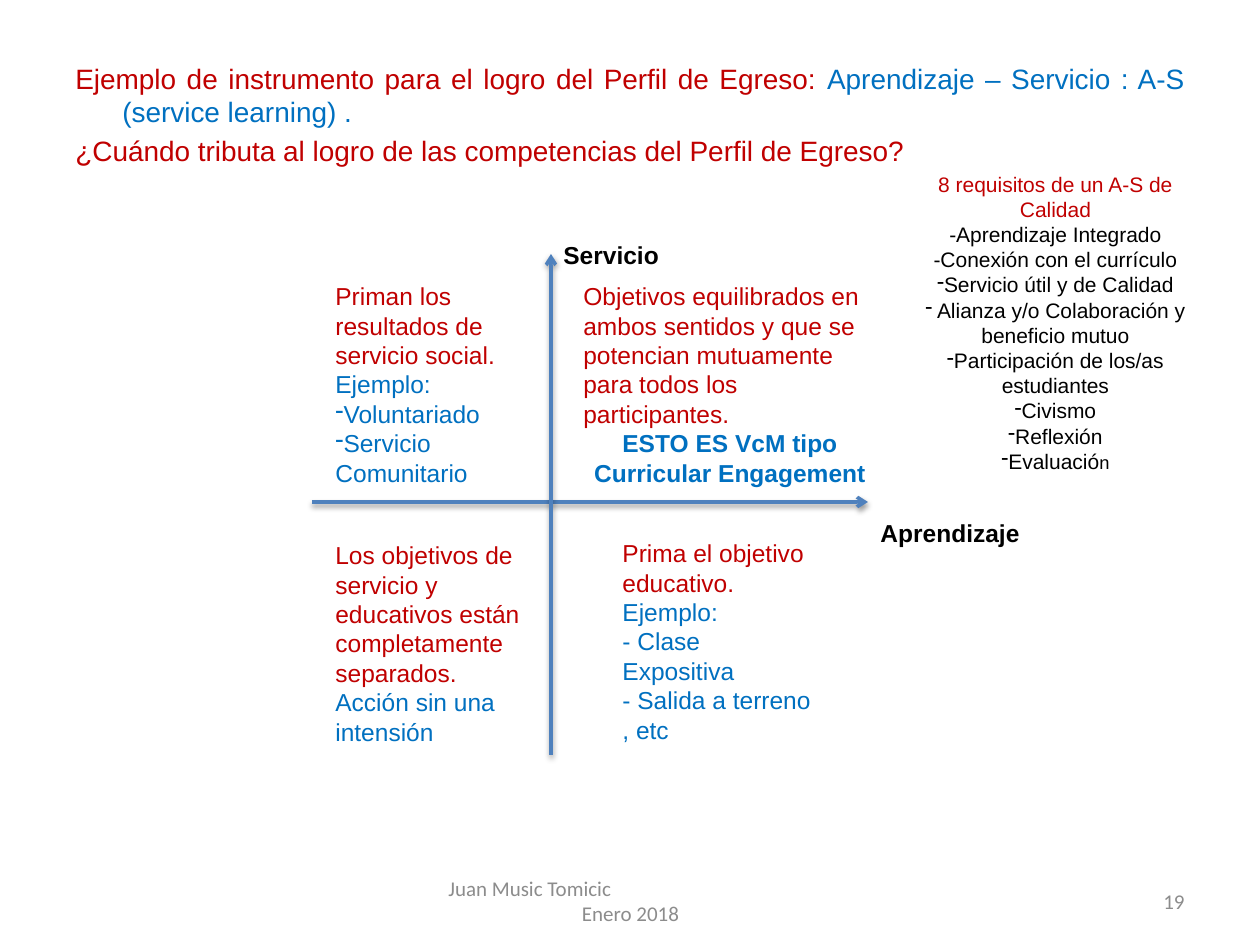
from lxml.etree import SubElement
from pptx import Presentation
from pptx.dml.color import RGBColor
from pptx.enum.shapes import MSO_CONNECTOR
from pptx.enum.text import MSO_ANCHOR, PP_ALIGN
from pptx.oxml.ns import qn
from pptx.util import Emu, Pt

PX = 914400 / 126
RED = RGBColor(0xC0, 0x00, 0x00)
BLUE = RGBColor(0x00, 0x70, 0xC0)
BLACK = RGBColor(0x00, 0x00, 0x00)
GREY = RGBColor(0x8C, 0x8C, 0x8C)
AXIS = RGBColor(0x4F, 0x81, 0xBD)
LEFT, CENTER, RIGHT, JUSTIFY = PP_ALIGN.LEFT, PP_ALIGN.CENTER, PP_ALIGN.RIGHT, PP_ALIGN.JUSTIFY

HEADING = [
    ([("Ejemplo de instrumento para el logro del Perfil de Egreso: ", RED),
      ("Aprendizaje – Servicio : A-S (service learning) .", BLUE)], JUSTIFY),
    ([("¿Cuándo tributa al logro de las competencias del Perfil de Egreso?", RED)], JUSTIFY),
]
QUADRANTS = [
    ((323, 275, 208, 251), [
        ("Priman los resultados de servicio social.", RED),
        ("Ejemplo:", BLUE),
        ("Voluntariado", BLUE, "-"),
        ("Servicio Comunitario", BLUE, "-")]),
    ((610, 532, 219, 221), [
        ("Prima el objetivo educativo.", RED),
        ("Ejemplo:", BLUE),
        ("- Clase Expositiva", BLUE),
        ("- Salida a terreno , etc", BLUE)]),
    ((323, 534, 238, 221), [
        ("Los objetivos de servicio y educativos están completamente separados.", RED),
        ("Acción sin una intensión", BLUE)]),
]
BALANCED = [
    ([("Objetivos equilibrados en ambos sentidos y que se potencian mutuamente "
       "para todos los participantes.", RED)], LEFT),
    ([("ESTO ES VcM tipo", BLUE, True)], CENTER),
    ([("Curricular Engagement", BLUE, True)], CENTER),
]
REQUIREMENTS_INTRO = [
    ("8 requisitos de un A-S de Calidad", RED),
    ("-Aprendizaje Integrado", BLACK),
    ("-Conexión con el currículo", BLACK),
]
REQUIREMENTS = [
    "Servicio útil y de Calidad",
    " Alianza y/o Colaboración y beneficio mutuo",
    "Participación de los/as estudiantes",
    "Civismo",
    "Reflexión",
]
AXIS_LABELS = [("Aprendizaje", (868, 512, 169, 43)), ("Servicio", (551, 234, 139, 43))]
AXES = [(312, 502, 868, 502), (551, 755, 551, 254)]


def px(value):
    return Emu(round(value * PX))


def add_bullet(paragraph, character):
    properties = paragraph._p.get_or_add_pPr()
    properties.set("marL", "0")
    properties.set("indent", "0")
    SubElement(properties, qn("a:buFontTx"))
    SubElement(properties, qn("a:buChar"), char=character)


def add_text(slide, box, paragraphs, size, font="Arial", anchor=MSO_ANCHOR.TOP):
    shape = slide.shapes.add_textbox(*map(px, box))
    frame = shape.text_frame
    frame.word_wrap = True
    frame.vertical_anchor = anchor
    for index, (runs, alignment, *bullet) in enumerate(paragraphs):
        paragraph = frame.add_paragraph() if index else frame.paragraphs[0]
        paragraph.alignment = alignment
        if bullet:
            add_bullet(paragraph, bullet[0])
        for text, color, *bold in runs:
            run = paragraph.add_run()
            run.text = text
            run.font.name = font
            run.font.size = Pt(size)
            run.font.color.rgb = color
            run.font.bold = bool(bold)
    return frame


def add_axis(slide, ends):
    axis = slide.shapes.add_connector(MSO_CONNECTOR.STRAIGHT, *map(px, ends))
    axis.line.color.rgb = AXIS
    axis.line.width = Pt(2)
    SubElement(axis.line._get_or_add_ln(), qn("a:tailEnd"), type="arrow")
    effects = SubElement(axis._element.spPr, qn("a:effectLst"))
    shadow = SubElement(effects, qn("a:outerShdw"), blurRad=str(Pt(3.1)),
                        dist=str(Pt(1.6)), dir="5400000", rotWithShape="0")
    color = SubElement(shadow, qn("a:srgbClr"), val=str(BLACK))
    SubElement(color, qn("a:alpha"), val="38000")


def main():
    presentation = Presentation()
    presentation.slide_width, presentation.slide_height = px(1260), px(945)
    slide = presentation.slides.add_slide(presentation.slide_layouts[6])

    heading = add_text(slide, (63, 55, 1134, 789), HEADING, 16)
    for paragraph in heading.paragraphs:
        paragraph.space_before = Pt(3.2)
        properties = paragraph._p.get_or_add_pPr()
        properties.set("marL", str(px(47)))
        properties.set("indent", str(-px(47)))

    footer = [([("Juan Music Tomicic", GREY)], LEFT), ([("Enero 2018", GREY)], CENTER)]
    footer_frame = add_text(slide, (431, 876, 399, 50), footer, 12, "Calibri", MSO_ANCHOR.MIDDLE)
    footer_frame.paragraphs[0]._p.get_or_add_pPr().set("marL", str(px(5)))
    add_text(slide, (903, 876, 294, 50), [([("19", GREY)], RIGHT)], 12, "Calibri",
             MSO_ANCHOR.MIDDLE)

    add_text(slide, (571, 275, 318, 221), BALANCED, 14)
    for ends in AXES:
        add_axis(slide, ends)
    for label, box in AXIS_LABELS:
        add_text(slide, box, [([(label, BLACK, True)], LEFT)], 14)
    for box, lines in QUADRANTS:
        add_text(slide, box, [([(text, color)], LEFT, *bullet)
                              for text, color, *bullet in lines], 14)

    requirements = [([line], CENTER) for line in REQUIREMENTS_INTRO]
    requirements += [([(text, BLACK)], CENTER, "-") for text in REQUIREMENTS]
    requirements.append(([("Evaluació", BLACK), ("n", BLACK)], CENTER, "-"))
    frame = add_text(slide, (907, 165, 297, 318), requirements, 12)
    frame.paragraphs[-1].runs[-1].font.size = Pt(10.5)

    presentation.save("out.pptx")


if __name__ == "__main__":
    main()
